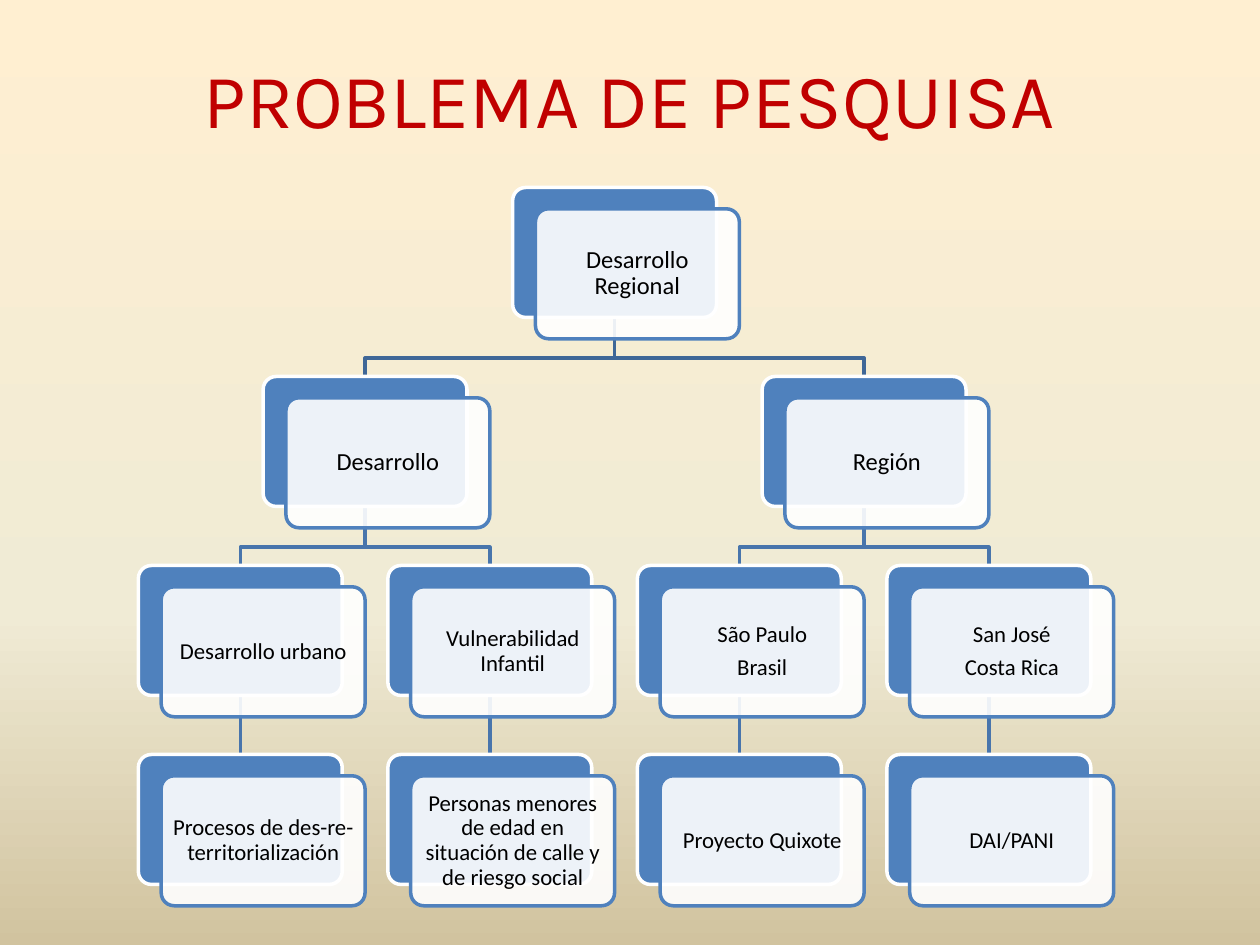
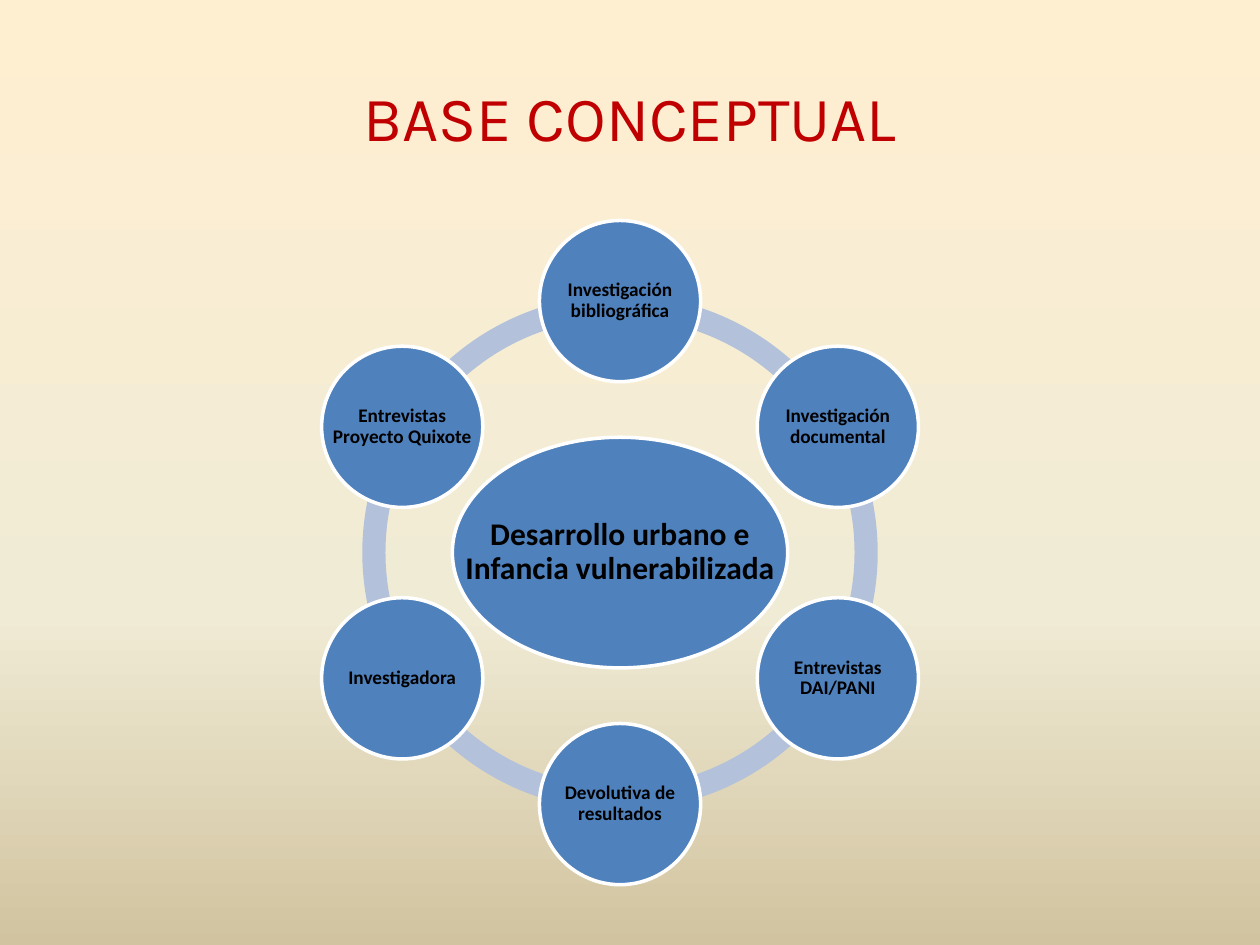
from copy import deepcopy
from math import cos, radians, sin

from pptx import Presentation
from pptx.dml.color import RGBColor
from pptx.enum.shapes import MSO_CONNECTOR, MSO_SHAPE
from pptx.enum.text import MSO_ANCHOR, PP_ALIGN
from pptx.oxml.ns import qn
from pptx.util import Cm, Pt

# Each topic: label, then its subtopics
TOPIC_TREE = ("Desarrollo Regional", [
    ("Desarrollo", [
        ("Desarrollo urbano", [("Procesos de des-re-territorialización", [])]),
        ("Vulnerabilidad Infantil", [
            ("Personas menores de edad en situación de calle y de riesgo social", []),
        ]),
    ]),
    ("Región", [
        ("São Paulo\nBrasil", [("Proyecto Quixote", [])]),
        ("San José\nCosta Rica", [("DAI/PANI", [])]),
    ]),
])
CORE_CONCEPT = "Desarrollo urbano e Infancia vulnerabilizada"
RESEARCH_STEPS = [  # clockwise from the top
    "Investigación bibliográfica",
    "Investigación documental",
    "Entrevistas DAI/PANI",
    "Devolutiva de resultados",
    "Investigadora",
    "Entrevistas Proyecto Quixote",
]

COLORS = {
    "title": "C00000", "text": "000000", "blue": "4F81BD", "white": "FFFFFF",
    "ring": "B3C1DB", "root_branch": "3F6797", "branch": "4875AC",
}
BACKGROUND_STOPS = [(0, "FFEFD1"), (0.65, "F0EBD5"), (1, "D1C39F")]
TITLE_FONT, BODY_FONT = "Karla", "Calibri"

# Lengths in centimetres
TREE_LEFT, TREE_TOP = 2.79, 3.78
COLUMN_PITCH, ROW_PITCH = 5.03, 3.81
CARD_WIDTH, CARD_HEIGHT = 4.11, 2.62
CARD_SHIFT_X, CARD_SHIFT_Y = 0.46, 0.43
BRANCH_DROP = 0.82

HUB_X, HUB_Y = 12.5, 11.14
ORBIT_RADIUS, STEP_SIZE, RING_SIZE = 5.07, 3.25, 10.39
CORE_WIDTH, CORE_HEIGHT = 6.76, 4.65


def rgb(name):
    return RGBColor.from_string(COLORS[name])


def paint_background(master):
    fill = master.background.fill
    fill.gradient()
    fill.gradient_angle = 270
    stop_list = master.element.xpath(".//p:bg//a:gsLst")[0]
    while len(stop_list) < len(BACKGROUND_STOPS):
        stop_list.append(deepcopy(stop_list[-1]))
    for stop, (position, color) in zip(fill.gradient_stops, BACKGROUND_STOPS):
        stop.position = position
        stop.color.rgb = RGBColor.from_string(color)


def write(shape, text, size, inset, font=BODY_FONT, color="text", bold=False):
    """Put centred, wrapped text into a shape or text box."""
    frame = shape.text_frame
    frame.text = text
    frame.word_wrap = True
    frame.vertical_anchor = MSO_ANCHOR.MIDDLE
    frame.margin_left = frame.margin_right = Cm(inset)
    frame.margin_top = frame.margin_bottom = Cm(inset)
    for paragraph in frame.paragraphs:
        paragraph.alignment = PP_ALIGN.CENTER
        if font == BODY_FONT:
            paragraph.line_spacing = 0.9
            paragraph.space_after = Pt(size * 0.35)
        for run in paragraph.runs:
            run.font.name = font
            run.font.size = Pt(size)
            run.font.bold = bold
            run.font.color.rgb = rgb(color)


def add_title(slide, text, size, height):
    title = slide.shapes.add_textbox(Cm(1.27), Cm(0.76), Cm(22.86), Cm(height))
    write(title, text, size, 0.13, TITLE_FONT, "title")


def add_filled(slide, kind, x, y, width, height, fill, line=None):
    shape = slide.shapes.add_shape(kind, Cm(x), Cm(y), Cm(width), Cm(height))
    shape.shadow.inherit = False
    shape.fill.solid()
    shape.fill.fore_color.rgb = rgb(fill)
    if line:
        shape.line.color.rgb = rgb(line)
        shape.line.width = Pt(2)
    else:
        shape.line.fill.background()
    return shape


def place_topics(topic, level=0, first_column=0):
    """Return (column, leaf count, nodes, branches), parents centred on children."""
    label, children = topic
    nodes, branches, child_columns, leaves = [], [], [], 0
    for child in children:
        column, count, below, links = place_topics(child, level + 1, first_column + leaves)
        child_columns.append(column)
        leaves += count
        nodes += below
        branches += links
    column = sum(child_columns) / len(child_columns) if children else first_column
    branches += [(level, column, child_column) for child_column in child_columns]
    return column, leaves or 1, [(label, level, column)] + nodes, branches


def card_corner(column, level):
    return TREE_LEFT + column * COLUMN_PITCH, TREE_TOP + level * ROW_PITCH


def add_branch(slide, level, parent_column, child_column):
    parent_x, parent_y = card_corner(parent_column, level)
    child_x, end_y = card_corner(child_column, level + 1)
    start_x, end_x = parent_x + CARD_WIDTH / 2, child_x + CARD_WIDTH / 2
    start_y = parent_y + CARD_HEIGHT
    if parent_column == child_column:
        branch = slide.shapes.add_connector(
            MSO_CONNECTOR.STRAIGHT, Cm(start_x), Cm(start_y), Cm(end_x), Cm(end_y))
        branch._element.spPr.append(branch._element.makeelement(qn("a:effectLst"), {}))
    else:
        bend_y = start_y + BRANCH_DROP
        corners = [(start_x, bend_y), (end_x, bend_y), (end_x, end_y)]
        outline = slide.shapes.build_freeform(Cm(start_x), Cm(start_y))
        outline.add_line_segments([(Cm(x), Cm(y)) for x, y in corners], close=False)
        branch = outline.convert_to_shape()
        branch.shadow.inherit = False
        branch.fill.background()
    branch.line.color.rgb = rgb("branch" if level else "root_branch")
    branch.line.width = Pt(2)


def add_card(slide, label, level, column):
    x, y = card_corner(column, level)
    size = CARD_WIDTH, CARD_HEIGHT
    back = add_filled(slide, MSO_SHAPE.ROUNDED_RECTANGLE, x, y, *size, "blue", "white")
    front = add_filled(slide, MSO_SHAPE.ROUNDED_RECTANGLE, x + CARD_SHIFT_X,
                       y + CARD_SHIFT_Y, *size, "white", "blue")
    for card in (back, front):
        card.adjustments[0] = 0.1
    white = front._element.spPr.find(qn("a:solidFill"))[0]
    white.append(white.makeelement(qn("a:alpha"), {"val": "90000"}))
    write(front, label, 14 if level < 2 else 13, 0.06)


def add_bubble(slide, label, center_x, center_y, width, height, size):
    """Draw an ellipse whose label may use its full width."""
    x, y = center_x - width / 2, center_y - height / 2
    add_filled(slide, MSO_SHAPE.OVAL, x, y, width, height, "blue", "white")
    caption = slide.shapes.add_textbox(Cm(x), Cm(y), Cm(width), Cm(height))
    write(caption, label, size, 0.06, bold=True)


def build_problem(slide):
    add_title(slide, "PROBLEMA DE PESQUISA", 44, 2.41)
    _, _, nodes, branches = place_topics(TOPIC_TREE)
    for branch in branches:
        add_branch(slide, *branch)
    for node in nodes:
        add_card(slide, *node)


def build_concept(slide):
    add_title(slide, "BASE CONCEPTUAL", 36, 3.18)
    step_angle = 360 / len(RESEARCH_STEPS)
    angles = [index * step_angle - 90 for index in range(len(RESEARCH_STEPS))]
    for angle in angles:
        arc = add_filled(slide, MSO_SHAPE.BLOCK_ARC, HUB_X - RING_SIZE / 2,
                         HUB_Y - RING_SIZE / 2, RING_SIZE, RING_SIZE, "ring")
        # Angles are stored in 1/60000 degree, adjustments in 1/100000
        arc.adjustments[0] = angle % 360 * 0.6
        arc.adjustments[1] = (angle + step_angle) % 360 * 0.6
        arc.adjustments[2] = 0.045
    add_bubble(slide, CORE_CONCEPT, HUB_X, HUB_Y, CORE_WIDTH, CORE_HEIGHT, 18)
    for label, angle in zip(RESEARCH_STEPS, angles):
        add_bubble(slide, label, HUB_X + ORBIT_RADIUS * cos(radians(angle)),
                   HUB_Y + ORBIT_RADIUS * sin(radians(angle)), STEP_SIZE, STEP_SIZE, 11)


def main():
    deck = Presentation()
    deck.slide_width, deck.slide_height = Cm(25.4), Cm(19.05)
    paint_background(deck.slide_master)
    for build in (build_problem, build_concept):
        build(deck.slides.add_slide(deck.slide_layouts[6]))
    deck.save("out.pptx")


if __name__ == "__main__":
    main()
